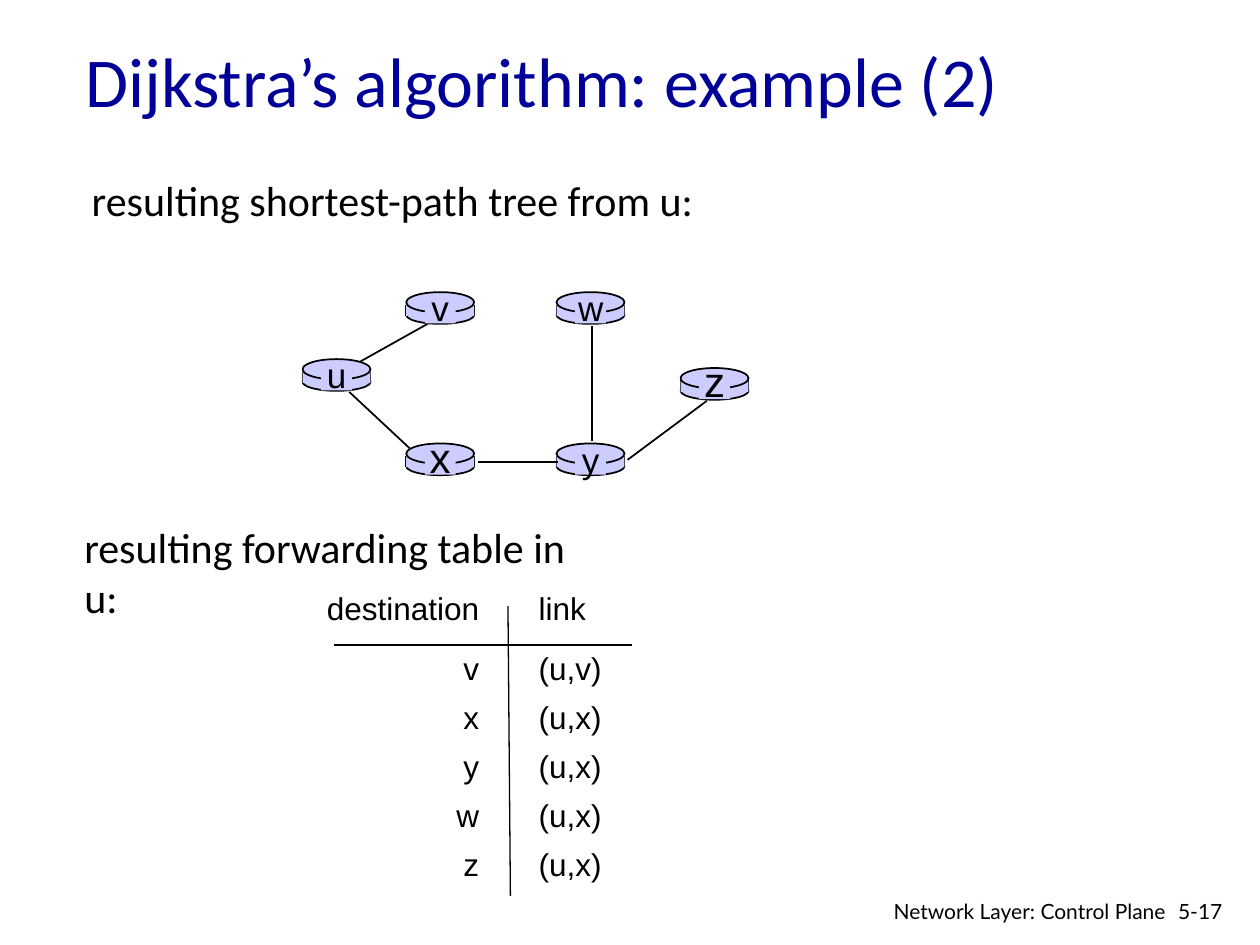
from typing import NamedTuple

import lxml.etree
import pptx
import pptx.dml.color
import pptx.enum.shapes
import pptx.enum.text
import pptx.oxml.ns
import pptx.util

Cm = pptx.util.Cm
Pt = pptx.util.Pt
RGBColor = pptx.dml.color.RGBColor
Shape = pptx.enum.shapes.MSO_SHAPE
Align = pptx.enum.text.PP_ALIGN
Anchor = pptx.enum.text.MSO_ANCHOR

BLACK = RGBColor(0x00, 0x00, 0x00)
NAVY = RGBColor(0x00, 0x00, 0x99)
LILAC = RGBColor(0xCC, 0xCC, 0xFF)


class Router(NamedTuple):
    name: str
    left: float
    top: float
    size: int = 20


class Line(NamedTuple):
    x1: float
    y1: float
    x2: float
    y2: float
    width: float = 1


class Label(NamedTuple):
    text: str
    left: float
    top: float
    width: float
    height: float
    size: int
    font: str
    color: RGBColor = BLACK
    align: Align = Align.LEFT
    anchor: Anchor = Anchor.TOP


# All lengths are in centimetres.
ROUTER_WIDTH = 1.37
LID_HEIGHT = 0.41
SIDE_TOP, SIDE_HEIGHT = 0.25, 0.23
ROUTERS = [
    Router("u", 6.1, 7.24),
    Router("x", 8.19, 8.94, 24),
    Router("v", 8.19, 5.89),
    Router("w", 11.22, 5.89),
    Router("y", 11.22, 8.94),
    Router("z", 13.72, 7.42, 24),
]
EDGES = [
    Line(7.26, 7.29, 8.76, 6.45),
    Line(11.94, 6.58, 11.94, 8.89),
    Line(12.65, 9.27, 14.25, 8.08),
    Line(11.25, 9.32, 9.63, 9.32),
    Line(8.26, 9.04, 7.04, 7.9),
]
RULES = [
    Line(10.24, 12.22, 10.29, 18.06, 0.75),
    Line(6.73, 13, 12.75, 13, 0.75),
]
LABELS = [
    Label("Dijkstra’s algorithm: example (2)", 1.47, 0.43, 21.59, 2.36,
          40, "Calibri", NAVY, anchor=Anchor.MIDDLE),
    Label("resulting shortest-path tree from u:", 1.6, 3.4, 13.5, 1.27, 24, "Calibri"),
    Label("resulting forwarding table in u:", 1.45, 10.39, 10.8, 2.3, 24, "Calibri"),
    Label("5-17", 23.5, 17.98, 1.52, 0.76, 12, "Lato"),
    Label("Network Layer: Control Plane", 17.7, 17.98, 6.05, 0.66,
          12, "Lato", align=Align.RIGHT),
]
FORWARDING = [
    ("destination", "link"),
    ("v", "(u,v)"),
    ("x", "(u,x)"),
    ("y", "(u,x)"),
    ("w", "(u,x)"),
    ("z", "(u,x)"),
]
COLUMN_WIDTHS = (3.71, 2.49)
HEADER_HEIGHT, ROW_HEIGHT = 1.42, 0.99


def format_text(frame, size: int, font: str, color: RGBColor, align: Align) -> None:
    for para in frame.paragraphs:
        para.alignment = align
        for span in para.runs:
            span.font.size = Pt(size)
            span.font.name = font
            span.font.color.rgb = color


def add_label(page, label: Label) -> None:
    box = page.shapes.add_textbox(
        Cm(label.left), Cm(label.top), Cm(label.width), Cm(label.height))
    frame = box.text_frame
    frame.word_wrap = True
    frame.vertical_anchor = label.anchor
    frame.text = label.text
    format_text(frame, label.size, label.font, label.color, label.align)


def add_line(page, line: Line) -> None:
    connector = page.shapes.add_connector(
        pptx.enum.shapes.MSO_CONNECTOR.STRAIGHT,
        Cm(line.x1), Cm(line.y1), Cm(line.x2), Cm(line.y2))
    connector.line.color.rgb = BLACK
    connector.line.width = Pt(line.width)
    lxml.etree.SubElement(connector._element.spPr, pptx.oxml.ns.qn("a:effectLst"))


def add_block(page, kind: Shape, left: float, top: float, width: float,
              height: float, outlined: bool) -> None:
    block = page.shapes.add_shape(kind, Cm(left), Cm(top), Cm(width), Cm(height))
    block.shadow.inherit = False
    block.fill.solid()
    block.fill.fore_color.rgb = LILAC
    if outlined:
        block.line.color.rgb = BLACK
        block.line.width = Pt(1)
    else:
        block.line.fill.background()


def add_router(page, router: Router) -> None:
    """Draw a flat cylinder: base, two sides, filled body and lid."""
    left, top = router.left, router.top
    side_top = top + SIDE_TOP
    add_block(page, Shape.OVAL, left, top + 0.28, ROUTER_WIDTH, 0.36, True)
    for x in (left, left + ROUTER_WIDTH):
        add_line(page, Line(x, side_top, x, side_top + SIDE_HEIGHT))
    add_block(page, Shape.RECTANGLE, left, side_top, ROUTER_WIDTH, SIDE_HEIGHT, False)
    add_block(page, Shape.OVAL, left, top, ROUTER_WIDTH, LID_HEIGHT, True)


def add_router_name(page, router: Router) -> None:
    """Write the name over a patch that interrupts the rim of the lid."""
    middle = router.left + ROUTER_WIDTH / 2
    add_block(page, Shape.RECTANGLE, middle - 0.31, router.top + 0.05, 0.62, 0.58, False)
    height = 1.1 if router.size == 20 else 1.27
    center = router.top + (0.32 if router.size == 20 else 0.26)
    add_label(page, Label(router.name, middle - 0.5, center - height / 2, 1, height,
                          router.size, "Arial", align=Align.CENTER))


def add_forwarding_table(page) -> None:
    height = HEADER_HEIGHT + ROW_HEIGHT * (len(FORWARDING) - 1)
    table = page.shapes.add_table(
        len(FORWARDING), len(COLUMN_WIDTHS), Cm(6.55), Cm(11.58),
        Cm(sum(COLUMN_WIDTHS)), Cm(height)).table
    table.first_row = False
    table.horz_banding = False
    for column, width in zip(table.columns, COLUMN_WIDTHS):
        column.width = Cm(width)
    for index, (row, texts) in enumerate(zip(table.rows, FORWARDING)):
        row.height = Cm(ROW_HEIGHT if index else HEADER_HEIGHT)
        for cell, text, align in zip(row.cells, texts, (Align.RIGHT, Align.LEFT)):
            cell.fill.background()
            cell.margin_top = cell.margin_bottom = 0
            cell.margin_left = Cm(0.6 if align == Align.LEFT else 0)
            cell.margin_right = Cm(0.6 if align == Align.RIGHT else 0)
            cell.vertical_anchor = Anchor.MIDDLE
            cell.text_frame.text = text
            format_text(cell.text_frame, 18, "Arial", BLACK, align)


def main() -> None:
    deck = pptx.Presentation()
    deck.slide_width, deck.slide_height = Cm(25.4), Cm(19.05)
    page = deck.slides.add_slide(deck.slide_layouts[6])
    first_edge, *other_edges = EDGES
    add_line(page, first_edge)
    for router in ROUTERS:
        add_router(page, router)
    for edge in other_edges:
        add_line(page, edge)
    for router in ROUTERS:
        add_router_name(page, router)
    add_forwarding_table(page)
    for rule in RULES:
        add_line(page, rule)
    for label in LABELS:
        add_label(page, label)
    deck.save("out.pptx")


if __name__ == "__main__":
    main()
